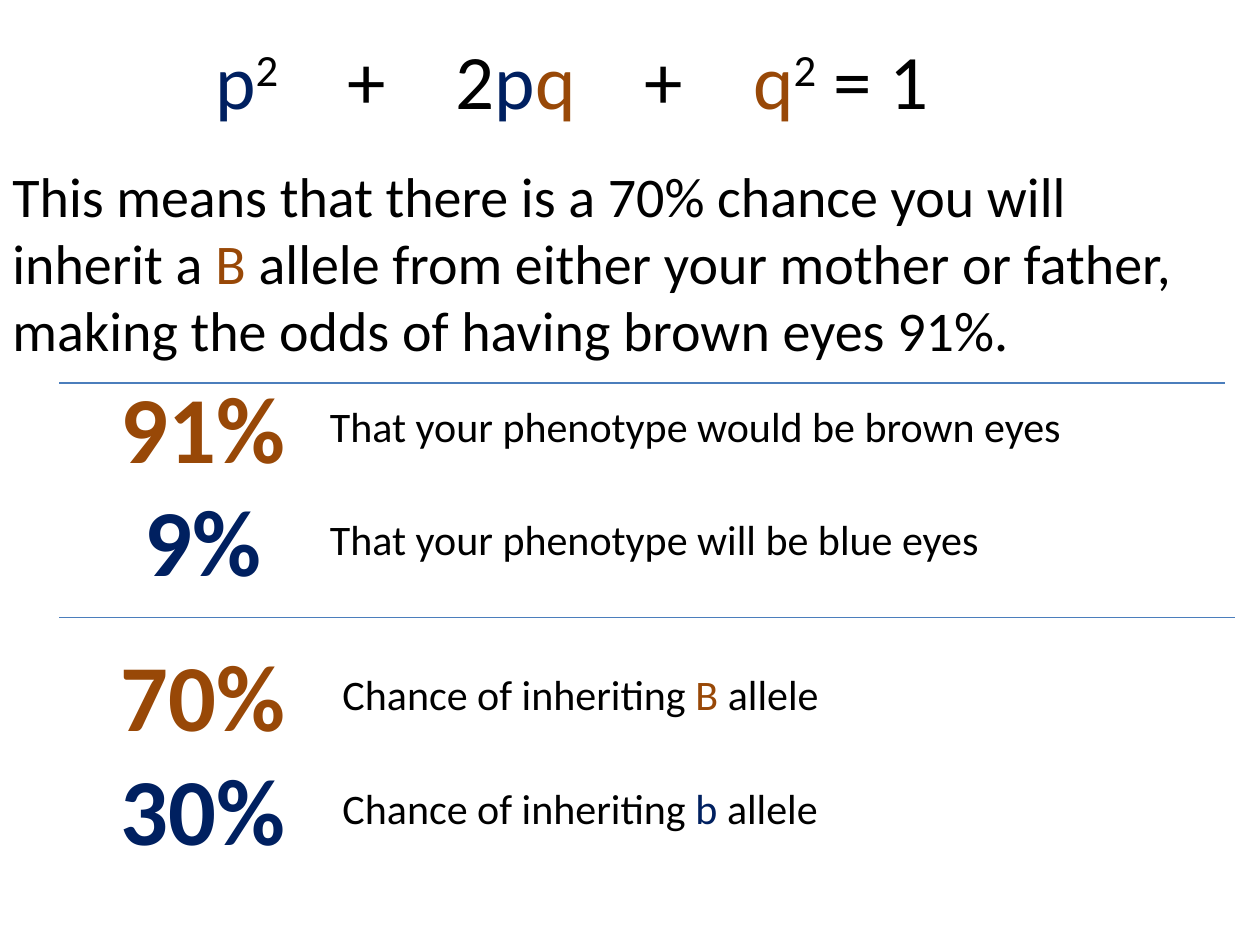
from dataclasses import dataclass

from lxml.etree import SubElement
from pptx import Presentation
from pptx.dml.color import RGBColor
from pptx.enum.shapes import MSO_CONNECTOR
from pptx.enum.text import PP_ALIGN
from pptx.oxml.ns import qn
from pptx.util import Inches, Pt

COLUMNS, ROWS = 100, 75
CELL = Inches(0.1)
FONT = "Calibri"
COLORS = {"text": "000000", "blue": "002060", "brown": "984807", "rule": "4B7EBC"}


@dataclass
class Span:
    text: str
    color: str = "text"
    raised: bool = False


@dataclass
class Odds:
    percent: str
    color: str
    label: list[Span]


@dataclass
class Group:
    row: float
    label_column: float
    odds: list[Odds]


@dataclass
class Rule:
    row: float
    end_column: float


FORMULA = [
    Span("p", "blue"), Span("2", raised=True),
    Span("\t+\t2"), Span("p", "blue"), Span("q", "brown"),
    Span("\t+\t"), Span("q", "brown"), Span("2", raised=True), Span(" = 1"),
]
FORMULA_TABS = (1.05, 1.91, 3.41, 4.27)  # inches from the start of the text

MEANING = [
    Span("This means that there is a 70% chance you will inherit a "),
    Span("B", "brown"),
    Span(" allele from either your mother or father, "
         "making the odds of having brown eyes 91%."),
]


def allele_label(allele: str, color: str) -> list[Span]:
    return [Span("Chance of inheriting "), Span(allele, color), Span(" allele")]


GROUPS = [
    Group(28.8, 25.2, [
        Odds("91%", "brown", [Span("That your phenotype would be brown eyes")]),
        Odds("9%", "blue", [Span("That your phenotype will be blue eyes")]),
    ]),
    Group(50.1, 26.2, [
        Odds("70%", "brown", allele_label("B", "brown")),
        Odds("30%", "blue", allele_label("b", "blue")),
    ]),
]
ODDS_PITCH = 9
PERCENT_COLUMN, PERCENT_WIDTH, PERCENT_HEIGHT = 8.5, 15.2, 10.1
LABEL_DROP, LABEL_WIDTH, LABEL_HEIGHT = 2.5, 70, 5

RULE_START = 4.7
RULES = [Rule(30.4, 97.2), Rule(49, 98)]


def cells(*counts: float) -> list[int]:
    """Turn grid counts into lengths."""
    return [round(count * CELL) for count in counts]


def add_text(page, spans: list[Span], *, at: tuple, size: float, bold: bool = False,
             align=PP_ALIGN.LEFT, wrap: bool = True, tabs: tuple = ()) -> None:
    box = page.shapes.add_textbox(*cells(*at))
    box.text_frame.word_wrap = wrap
    para = box.text_frame.paragraphs[0]
    para.alignment = align
    if tabs:
        tab_list = SubElement(para._p.get_or_add_pPr(), qn("a:tabLst"))
        for stop in tabs:
            SubElement(tab_list, qn("a:tab"), pos=str(Inches(stop)), algn="l")
    for span in spans:
        run = para.add_run()
        run.text = span.text
        run.font.name = FONT
        run.font.size = Pt(size)
        run.font.bold = bold
        run.font.color.rgb = RGBColor.from_string(COLORS[span.color])
        if span.raised:
            run._r.get_or_add_rPr().set("baseline", "30000")


def add_rule(page, rule: Rule) -> None:
    line = page.shapes.add_connector(
        MSO_CONNECTOR.STRAIGHT,
        *cells(RULE_START, rule.row, rule.end_column, rule.row))
    line.line.color.rgb = RGBColor.from_string(COLORS["rule"])
    line.line.width = Pt(0.75)
    SubElement(line._element.spPr, qn("a:effectLst"))


def add_group(page, group: Group) -> None:
    for index, odds in enumerate(group.odds):
        row = group.row + index * ODDS_PITCH
        add_text(page, [Span(odds.percent, odds.color)], size=54, bold=True,
                 at=(PERCENT_COLUMN, row, PERCENT_WIDTH, PERCENT_HEIGHT),
                 align=PP_ALIGN.CENTER, wrap=False)
        add_text(page, odds.label, size=24,
                 at=(group.label_column, row + LABEL_DROP, LABEL_WIDTH, LABEL_HEIGHT))


def main() -> None:
    deck = Presentation()
    deck.slide_width, deck.slide_height = cells(COLUMNS, ROWS)
    page = deck.slides.add_slide(deck.slide_layouts[6])
    add_text(page, FORMULA, at=(16.1, 2.1, 61.3, 8.4), size=44, tabs=FORMULA_TABS)
    add_text(page, MEANING, at=(0, 12.3, 98, 17.2), size=32)
    for group in GROUPS:
        add_group(page, group)
    for rule in RULES:
        add_rule(page, rule)
    deck.save("out.pptx")


if __name__ == "__main__":
    main()
